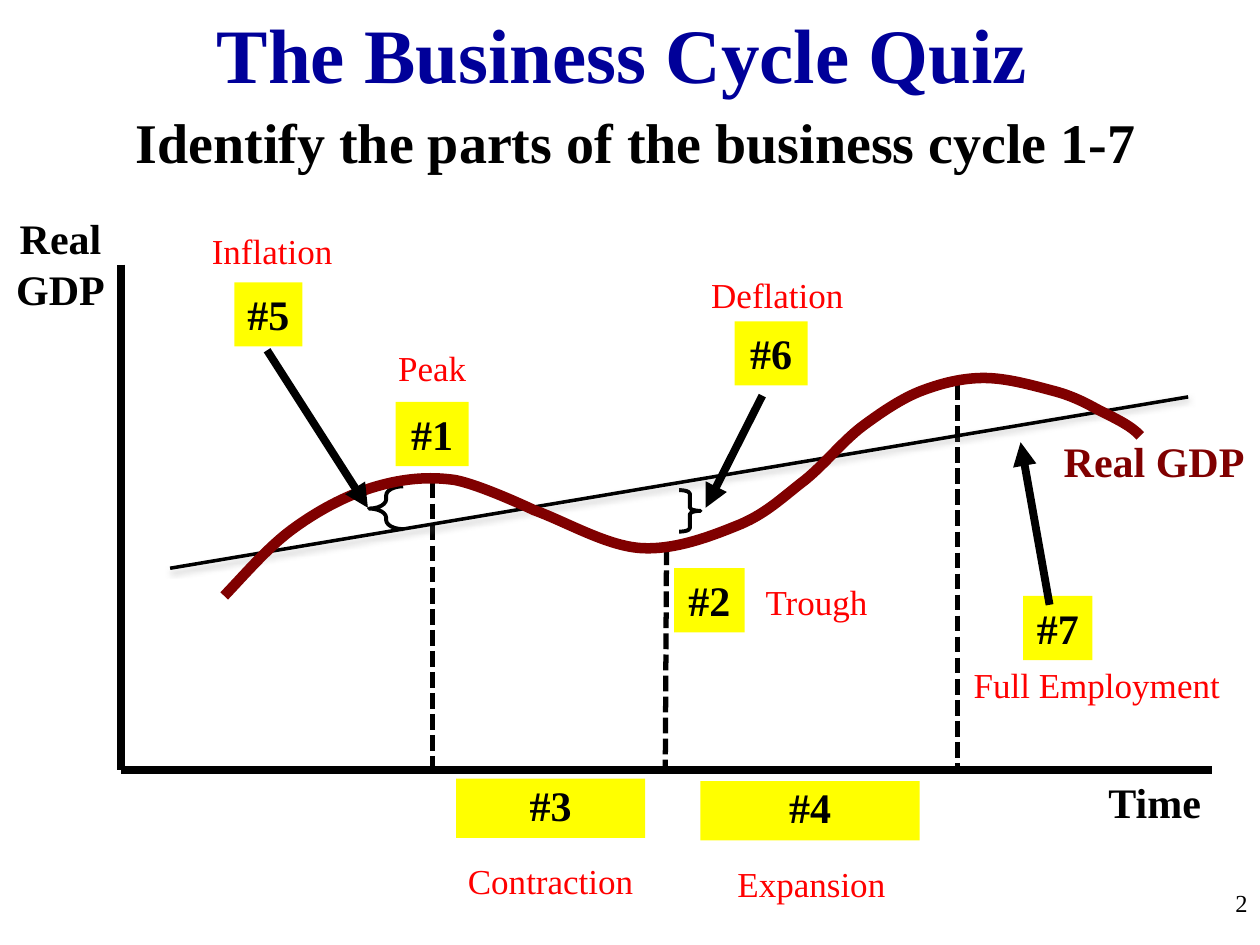
from dataclasses import dataclass
from typing import NamedTuple, Optional

from lxml.etree import SubElement
from pptx import Presentation
from pptx.dml.color import RGBColor
from pptx.enum.dml import MSO_LINE
from pptx.enum.shapes import MSO_CONNECTOR, MSO_SHAPE
from pptx.enum.text import MSO_ANCHOR, PP_ALIGN
from pptx.oxml.ns import qn
from pptx.util import Inches, Pt


@dataclass(frozen=True)
class Theme:
    font: str = "Times New Roman"
    ink: str = "000000"
    paper: str = "FFFFFF"
    title: str = "000099"
    tag: str = "FFFF00"
    answer: str = "FF0000"
    curve: str = "800000"
    shadow: str = "808080"
    title_size: int = 44
    subtitle_size: int = 32
    label_size: int = 24
    answer_size: int = 20
    number_size: int = 14


class Area(NamedTuple):
    left: float
    top: float
    width: float
    height: float


class Stroke(NamedTuple):
    start: tuple[float, float]
    end: tuple[float, float]
    width: float
    dashed: bool = False
    arrow: bool = False


class Tag(NamedTuple):
    text: str
    area: Area
    spacing: float = 1.0


class Label(NamedTuple):
    text: str
    area: Area
    color: str


class Brace(NamedTuple):
    shape: MSO_SHAPE
    area: Area
    adjustments: tuple[float, float]


THEME = Theme()
BASELINE = 6.11
ANSWER_WIDTH, ANSWER_HEIGHT = 1.62, 0.44

DROP_LINES = [
    Stroke((3.43, 3.83), (3.43, BASELINE), 3, dashed=True),
    Stroke((5.29, 4.36), (5.28, BASELINE), 3, dashed=True),
    Stroke((7.6, 3.05), (7.6, BASELINE), 3, dashed=True),
]
TREND = Stroke((1.35, 4.51), (9.43, 3.15), 2)
AXES = [
    Stroke((0.96, 2.1), (0.96, BASELINE), 4.5),
    Stroke((0.96, BASELINE), (9.62, BASELINE), 4.5),
]
ARROWS = [
    Stroke((6.05, 3.14), (5.6, 4.03), 4.5, arrow=True),
    Stroke((8.33, 4.8), (8.1, 3.51), 4.5, arrow=True),
    Stroke((2.12, 2.78), (2.92, 4.03), 4.5, arrow=True),
]
BRACES = [
    Brace(MSO_SHAPE.RIGHT_BRACE, Area(5.39, 3.89, 0.17, 0.33), (0.16, 0.5)),
    Brace(MSO_SHAPE.LEFT_BRACE, Area(2.93, 3.86, 0.27, 0.34), (0.27, 0.52)),
]
TAGS = [
    Tag("#1", Area(3.14, 3.19, 0.58, 0.51)),
    Tag("#2", Area(5.35, 4.51, 0.56, 0.51)),
    Tag("#3", Area(3.62, 6.18, 1.5, 0.47), 0.9),
    Tag("#4", Area(5.56, 6.2, 1.74, 0.47), 0.9),
    Tag("#5", Area(1.86, 2.24, 0.54, 0.51)),
    Tag("#6", Area(5.83, 2.55, 0.58, 0.51)),
    Tag("#7", Area(8.12, 4.73, 0.55, 0.51)),
]
LABELS = [
    Label("Time", Area(8.33, BASELINE, 1.67, 0.51), THEME.ink),
    Label("Real GDP", Area(-0.21, 1.64, 1.38, 0.91), THEME.ink),
    Label("Real GDP", Area(7.93, 3.41, 2.46, 0.51), THEME.curve),
]
ANSWERS = [
    ("Peak", 2.62, 2.7, ANSWER_WIDTH),
    ("Full Employment", 7.58, 5.22, 2.25),
    ("Deflation", 5.36, 2.12, ANSWER_WIDTH),
    ("Inflation", 1.35, 1.77, ANSWER_WIDTH),
    ("Trough", 5.67, 4.56, ANSWER_WIDTH),
    ("Contraction", 3.56, 6.77, ANSWER_WIDTH),
    ("Expansion", 5.63, 6.8, ANSWER_WIDTH),
]
# Start point, then two control points and an end point for each segment.
GDP_CURVE = [
    (1.78, 4.73),
    (1.97, 4.53), (2.15, 4.32), (2.35, 4.18),
    (2.56, 4.03), (2.78, 3.92), (2.99, 3.86),
    (3.2, 3.8), (3.4, 3.78), (3.61, 3.81),
    (3.82, 3.85), (4.24, 4.05), (4.24, 4.05),
    (4.49, 4.14), (4.81, 4.33), (5.08, 4.35),
    (5.36, 4.37), (5.66, 4.25), (5.88, 4.16),
    (6.09, 4.07), (6.22, 3.94), (6.39, 3.81),
    (6.55, 3.68), (6.69, 3.5), (6.85, 3.38),
    (7, 3.27), (7.16, 3.16), (7.32, 3.1),
    (7.48, 3.04), (7.64, 3), (7.81, 3),
    (7.99, 3), (8.2, 3.06), (8.35, 3.1),
    (8.51, 3.14), (8.62, 3.2), (8.73, 3.26),
    (8.85, 3.32), (8.98, 3.38), (9.05, 3.46),
]


def write_text(shape, text: str, *, size: int, color: str = THEME.ink, bold: bool = True,
               align=PP_ALIGN.CENTER, spacing: float = 1.0, wrap: bool = True) -> None:
    frame = shape.text_frame
    frame.word_wrap = wrap
    frame.vertical_anchor = MSO_ANCHOR.TOP
    para = frame.paragraphs[0]
    para.alignment, para.line_spacing = align, spacing
    span = para.add_run()
    span.text = text
    span.font.name, span.font.size, span.font.bold = THEME.font, Pt(size), bold
    span.font.color.rgb = RGBColor.from_string(color)


def add_text(page, area: Area, text: str, *, fill: Optional[str] = None, **text_format):
    """Place text in a filled rectangle, or in a plain text box without a fill."""
    place = [Inches(value) for value in area]
    if fill is None:
        box = page.shapes.add_textbox(*place)
    else:
        box = page.shapes.add_shape(MSO_SHAPE.RECTANGLE, *place)
        box.shadow.inherit = False
        box.fill.solid()
        box.fill.fore_color.rgb = RGBColor.from_string(fill)
        box.line.fill.background()
    write_text(box, text, **text_format)


def format_line(line, width: float, color: str = THEME.ink) -> None:
    line.width = Pt(width)
    line.color.rgb = RGBColor.from_string(color)


def add_stroke(page, stroke: Stroke):
    """Draw a straight line and return its empty effect list."""
    points = [Inches(value) for value in (*stroke.start, *stroke.end)]
    connector = page.shapes.add_connector(MSO_CONNECTOR.STRAIGHT, *points)
    format_line(connector.line, stroke.width)
    if stroke.dashed:
        connector.line.dash_style = MSO_LINE.SQUARE_DOT
    if stroke.arrow:
        SubElement(connector.line._get_or_add_ln(), qn("a:tailEnd"), type="triangle")
    return SubElement(connector._element.spPr, qn("a:effectLst"))


def add_trend(page) -> None:
    effects = add_stroke(page, TREND)
    shadow = SubElement(effects, qn("a:outerShdw"), blurRad=str(Pt(3.1)), dist=str(Pt(1.6)),
                        dir="5400000", rotWithShape="0")
    color = SubElement(shadow, qn("a:srgbClr"), val=THEME.shadow)
    SubElement(color, qn("a:alpha"), val="38000")


def add_brace(page, brace: Brace) -> None:
    shape = page.shapes.add_shape(brace.shape, *[Inches(value) for value in brace.area])
    shape.shadow.inherit = False
    shape.fill.background()
    format_line(shape.line, 2.25)
    for index, value in enumerate(brace.adjustments):
        shape.adjustments[index] = value


def add_curve(page) -> None:
    """Build the outline, then turn each three line steps into one Bezier segment."""
    start, *rest = [(Inches(x), Inches(y)) for x, y in GDP_CURVE]
    builder = page.shapes.build_freeform(*start)
    builder.add_line_segments(rest, close=False)
    curve = builder.convert_to_shape()
    curve.shadow.inherit = False
    curve.fill.background()
    format_line(curve.line, 6, THEME.curve)
    outline = next(curve._element.iter(qn("a:path")))
    steps = outline.findall(qn("a:lnTo"))
    for first in range(0, len(steps), 3):
        segment = SubElement(outline, qn("a:cubicBezTo"))
        for step in steps[first:first + 3]:
            segment.append(step[0])
            outline.remove(step)


def add_title(page, text: str, area: Area) -> None:
    title = page.shapes.title
    title.left, title.top, title.width, title.height = [Inches(value) for value in area]
    write_text(title, text, size=THEME.title_size, color=THEME.title, wrap=False)


def main() -> None:
    deck = Presentation()
    deck.slide_width, deck.slide_height = Inches(10), Inches(7.5)
    page = deck.slides.add_slide(deck.slide_layouts[5])
    add_title(page, "The Business Cycle Quiz", Area(1.59, 0, 6.7, 0.84))
    add_text(page, Area(0.05, 0.84, 10, 0.61), "Identify the parts of the business cycle 1-7",
             fill=THEME.paper, size=THEME.subtitle_size, spacing=0.95)
    for drop_line in DROP_LINES:
        add_stroke(page, drop_line)
    for brace in BRACES:
        add_brace(page, brace)
    add_trend(page)
    add_curve(page)
    for tag in TAGS:
        add_text(page, tag.area, tag.text, fill=THEME.tag, size=THEME.label_size,
                 spacing=tag.spacing)
    for stroke in AXES + ARROWS:
        add_stroke(page, stroke)
    for label in LABELS:
        add_text(page, label.area, label.text, size=THEME.label_size, color=label.color)
    for text, left, top, width in ANSWERS:
        add_text(page, Area(left, top, width, ANSWER_HEIGHT), text,
                 size=THEME.answer_size, color=THEME.answer, bold=False)
    add_text(page, Area(7.92, 7, 2.08, 0.5), "2", size=THEME.number_size, bold=False,
             align=PP_ALIGN.RIGHT)
    deck.save("out.pptx")


if __name__ == "__main__":
    main()
